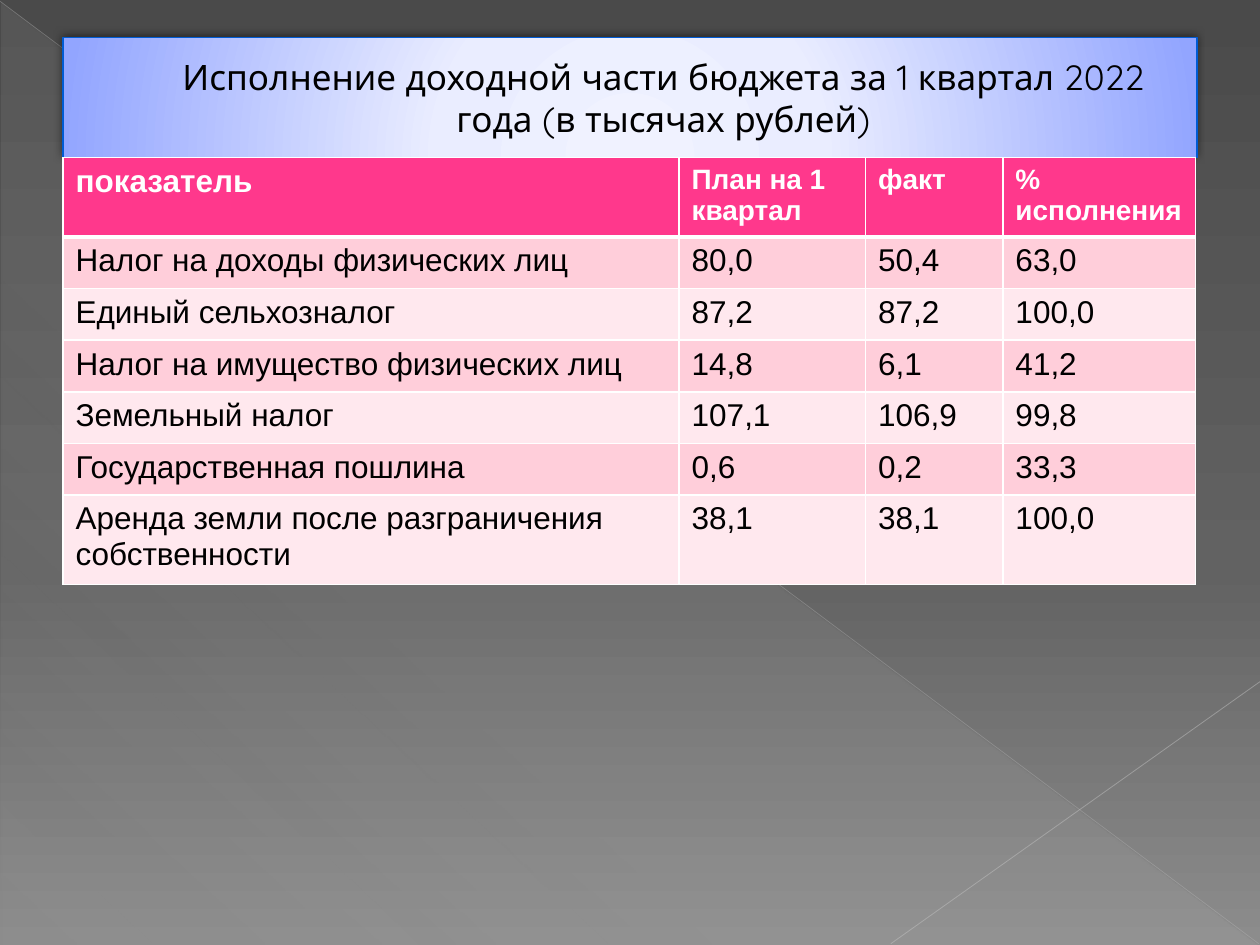
import pptx
import pptx.dml.color
import pptx.enum.shapes
import pptx.enum.text
import pptx.oxml
import pptx.oxml.ns
import pptx.util
from pptx.util import Inches

HEADERS = ["показатель", "План на 1 квартал", "факт", "% исполнения"]
INCOME = [
    ["Налог на доходы физических лиц", "80,0", "50,4", "63,0"],
    ["Единый сельхозналог", "87,2", "87,2", "100,0"],
    ["Налог на имущество физических лиц", "14,8", "6,1", "41,2"],
    ["Земельный налог", "107,1", "106,9", "99,8"],
    ["Государственная пошлина", "0,6", "0,2", "33,3"],
    ["Аренда земли после разграничения собственности", "38,1", "38,1", "100,0"],
]
COLUMN_WIDTHS = [4.89, 1.48, 1.09, 1.53]
ROW_HEIGHTS = [0.63] + [0.41] * 5 + [0.71]


def color(value):
    return pptx.dml.color.RGBColor.from_string(value)


def parse_xml(text):
    namespace = pptx.oxml.ns.nsdecls("a")
    return pptx.oxml.parse_xml(text.replace(">", f" {namespace}>", 1))


def color_xml(value, opacity=100):
    return f'<a:srgbClr val="{value}"><a:alpha val="{opacity * 1000}"/></a:srgbClr>'


def line_xml(tag, value, width, opacity=100):
    return (f'<a:{tag} w="{pptx.util.Pt(width)}"><a:solidFill>'
            f'{color_xml(value, opacity)}</a:solidFill></a:{tag}>')


def set_gradient(owner, stops, direction):
    owner.fill.gradient()
    gradient = next(owner.fill._xPr.iter(pptx.oxml.ns.qn("a:gradFill")))
    stop_list = "".join(
        f'<a:gs pos="{position * 1000}">{color_xml(*shade)}</a:gs>'
        for position, *shade in stops)
    replacement = parse_xml(
        f'<a:gradFill><a:gsLst>{stop_list}</a:gsLst>{direction}</a:gradFill>')
    gradient.getparent().replace(gradient, replacement)


def linear(angle):
    return f'<a:lin ang="{angle * 60000}" scaled="0"/>'


def write_text(text_frame, text, *, font, size, fill, bold=False, align=None,
               outline=None):
    paragraph = text_frame.paragraphs[0]
    paragraph.alignment = align
    run = paragraph.add_run()
    run.text = text
    run.font.name = font
    run.font.size = pptx.util.Pt(size)
    run.font.bold = bold
    run.font.color.rgb = color(fill)
    if outline:
        run.font._element.insert(0, parse_xml(line_xml("ln", *outline)))
    return paragraph


def add_line(slide, start, end, value, width, opacity):
    points = [Inches(length) for length in (*start, *end)]
    connector = slide.shapes.add_connector(
        pptx.enum.shapes.MSO_CONNECTOR.STRAIGHT, *points)
    properties = connector.element.spPr
    properties.append(parse_xml(line_xml("ln", value, width, opacity)))
    properties.append(parse_xml("<a:effectLst></a:effectLst>"))


def add_backdrop(slide):
    set_gradient(slide.background,
                 [(0, "4A4A4A"), (60, "626262"), (100, "8C8C8C")], linear(90))
    triangle = slide.shapes.add_shape(
        pptx.enum.shapes.MSO_SHAPE.RIGHT_TRIANGLE,
        Inches(0.01), Inches(0.02), Inches(9.98), Inches(7.48))
    triangle.shadow.inherit = False
    triangle.line.fill.background()
    set_gradient(triangle, [(0, "D2D2D2", 10), (70, "D2D2D2", 8),
                            (100, "D2D2D2", 1)], linear(133))
    add_line(slide, (0, 0.01), (9.99, 7.49), "BFBFBF", 0.39, 35)
    add_line(slide, (10, 5.41), (7.07, 7.49), "C6C6C6", 0.47, 45)


def format_title(slide, text):
    title = slide.shapes.title
    title.element.getparent().append(title.element)
    title.left, title.top = Inches(0.5), Inches(0.3)
    title.width, title.height = Inches(9), Inches(0.95)
    set_gradient(title, [(0, "F0F2FF"), (34, "EAEDFF"), (100, "92A5FF")],
                 '<a:path path="circle"><a:fillToRect l="50000" t="155000" '
                 'r="50000" b="-55000"/></a:path>')
    title.line.color.rgb = color("005BD3")
    title.line.width = pptx.util.Pt(0.75)
    title.shadow.inherit = False
    effects = title.element.spPr.find(pptx.oxml.ns.qn("a:effectLst"))
    effects.append(parse_xml(
        f'<a:outerShdw blurRad="{pptx.util.Pt(5)}" dist="{pptx.util.Pt(2)}" '
        f'dir="{245 * 60000}" rotWithShape="0">{color_xml("000000", 50)}'
        '</a:outerShdw>'))
    text_frame = title.text_frame
    text_frame.word_wrap = True
    text_frame.auto_size = pptx.enum.text.MSO_AUTO_SIZE.NONE
    text_frame.vertical_anchor = pptx.enum.text.MSO_ANCHOR.MIDDLE
    paragraph = write_text(text_frame, text, font="Quicksand", size=20,
                           fill="000000", align=pptx.enum.text.PP_ALIGN.CENTER,
                           outline=("B12761", 0.5))
    properties = paragraph._p.get_or_add_pPr()
    properties.set("marL", str(Inches(0.53)))
    properties.set("indent", "0")


def format_cell(cell, text, row, column):
    header = row == 0
    edges = {"lnL": 1, "lnR": 1, "lnT": 3 if row == 1 else 1,
             "lnB": 3 if header else 1}
    for tag, width in edges.items():
        cell._tc.get_or_add_tcPr().append(parse_xml(line_xml(tag, "FFFFFF", width)))
    cell.fill.solid()
    band = "FFCEDA" if row % 2 else "FFE8EE"
    cell.fill.fore_color.rgb = color("FF388C" if header else band)
    write_text(cell.text_frame, text, font="Arial", bold=header,
               size=16 if header and column else 18,
               fill="FFFFFF" if header else "000000")


def add_income_table(slide):
    rows = [HEADERS, *INCOME]
    table = slide.shapes.add_table(
        len(rows), len(HEADERS), Inches(0.5), Inches(1.25),
        Inches(9), Inches(sum(ROW_HEIGHTS))).table
    for column, width in zip(table.columns, COLUMN_WIDTHS):
        column.width = Inches(width)
    for row, height in zip(table.rows, ROW_HEIGHTS):
        row.height = Inches(height)
    for row, texts in enumerate(rows):
        for column, text in enumerate(texts):
            format_cell(table.cell(row, column), text, row, column)


def main():
    presentation = pptx.Presentation()
    presentation.slide_width = Inches(10)
    presentation.slide_height = Inches(7.5)
    slide = presentation.slides.add_slide(presentation.slide_layouts[5])
    add_backdrop(slide)
    format_title(
        slide, "Исполнение доходной части бюджета за 1 квартал 2022 года (в тысячах рублей)")
    add_income_table(slide)
    presentation.save("out.pptx")


if __name__ == "__main__":
    main()
